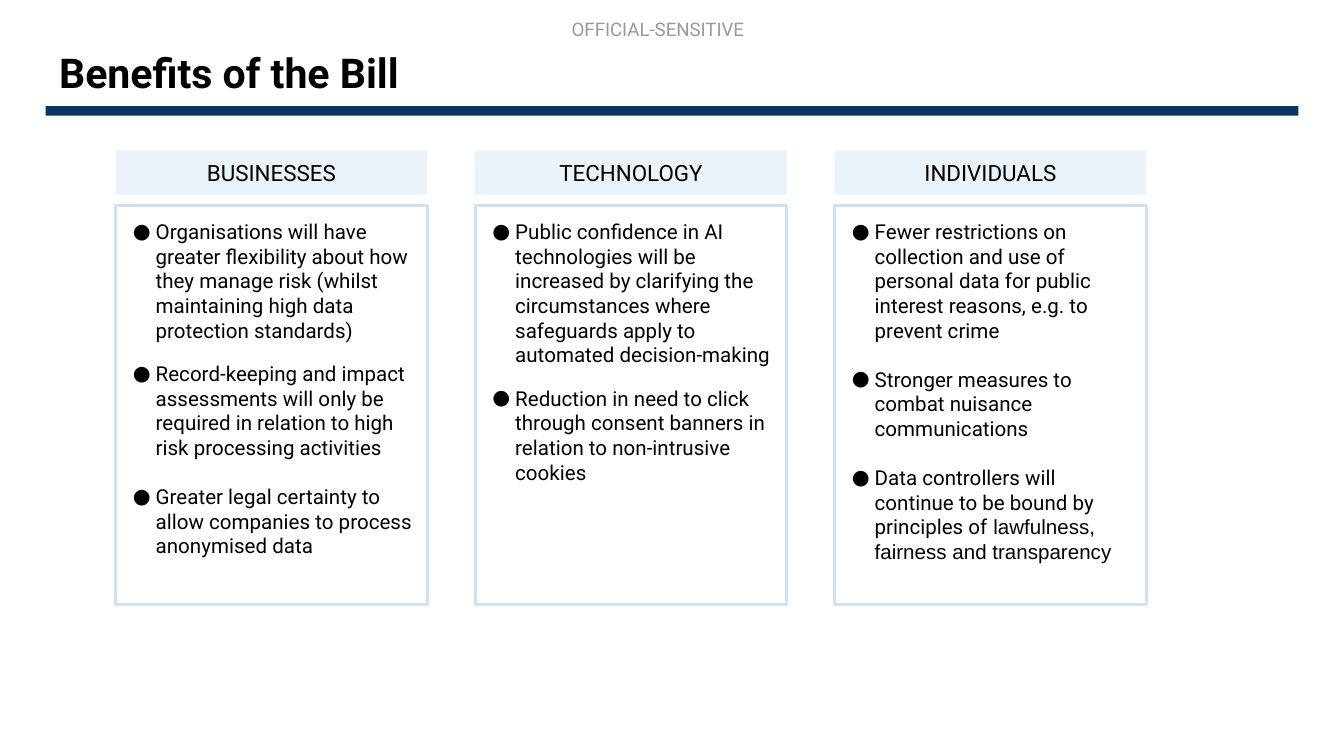
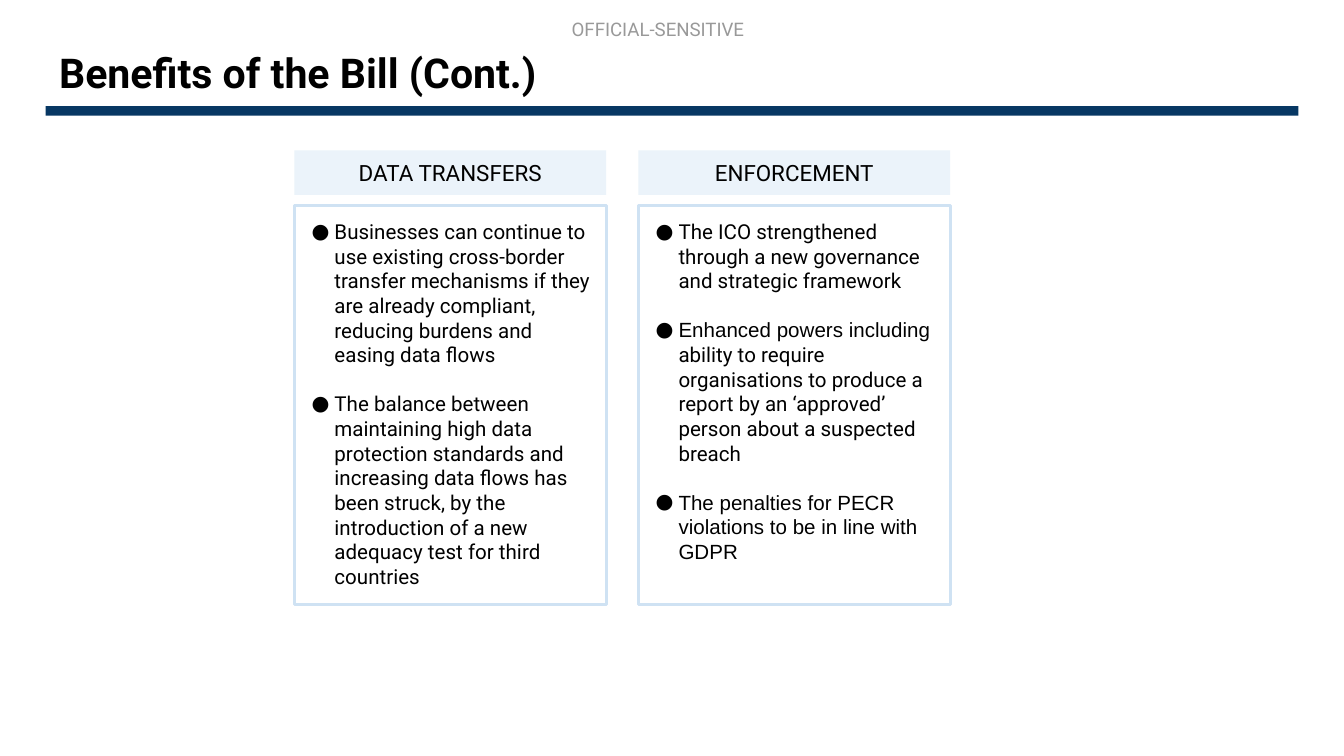
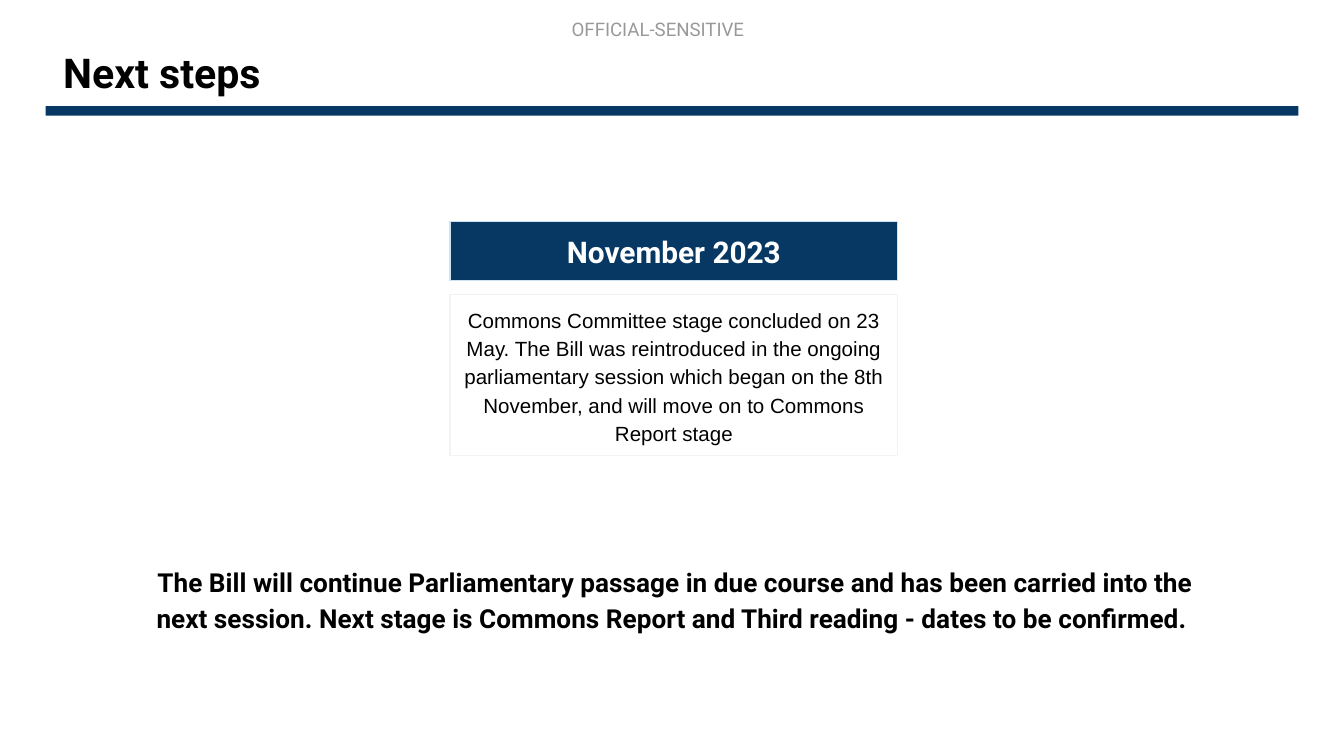
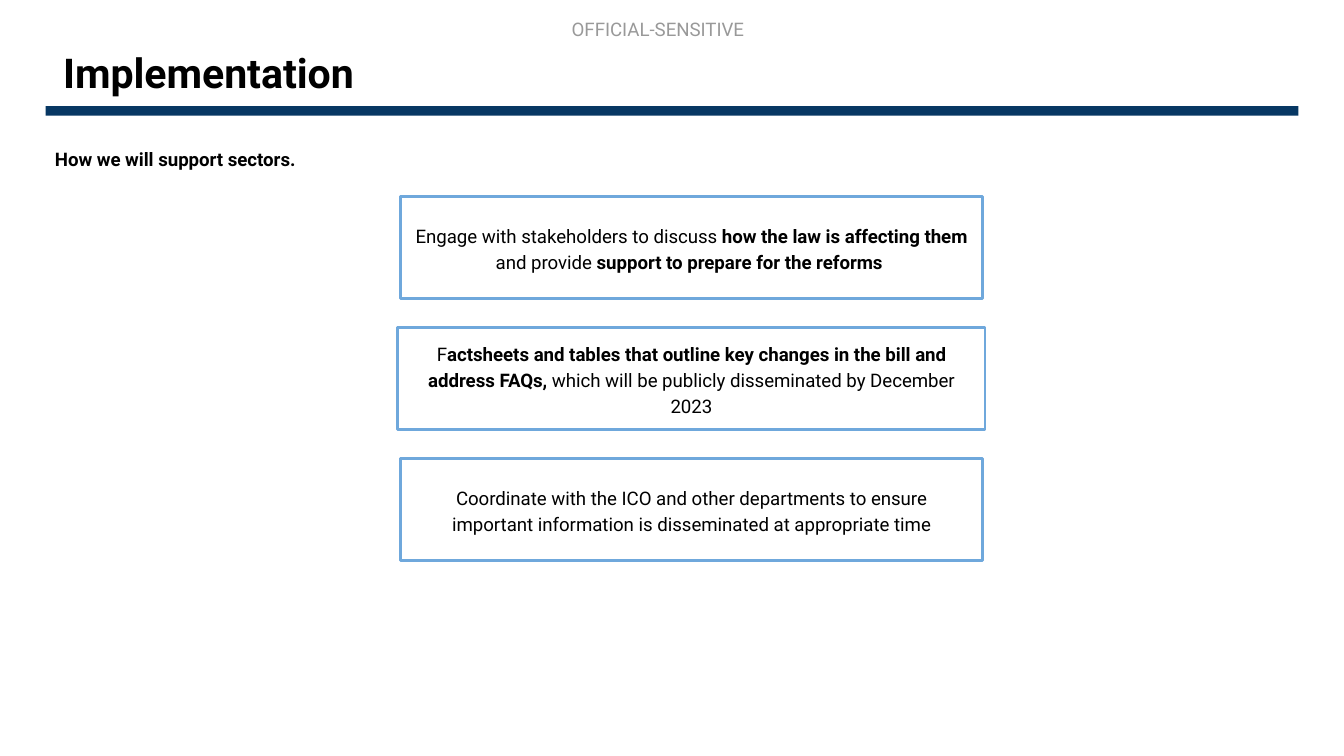
from dataclasses import dataclass

from lxml import etree
from pptx import Presentation
from pptx.dml.color import RGBColor
from pptx.enum.shapes import MSO_SHAPE
from pptx.enum.text import MSO_ANCHOR, MSO_AUTO_SIZE, PP_ALIGN
from pptx.oxml.ns import qn
from pptx.util import Inches, Pt

RECTANGLE = MSO_SHAPE.RECTANGLE
TOP, MIDDLE = MSO_ANCHOR.TOP, MSO_ANCHOR.MIDDLE
LEFT, CENTER = PP_ALIGN.LEFT, PP_ALIGN.CENTER
FIXED, GROW = MSO_AUTO_SIZE.NONE, MSO_AUTO_SIZE.SHAPE_TO_FIT_TEXT
TITLE_ONLY = 5


@dataclass(frozen=True)
class Theme:
    navy: str = "073763"
    pale_blue: str = "CFE2F3"
    mid_blue: str = "6FA8DC"
    pale_grey: str = "F3F3F3"
    grey: str = "999999"
    black: str = "000000"
    white: str = "FFFFFF"
    font: str = "Roboto"
    plain_font: str = "Arial"
    title_size: float = 22
    date_size: float = 16
    closing_size: float = 14
    heading_size: float = 12
    body_size: float = 11
    small_size: float = 10
    loose: float = 1.15
    inset: float = 0.1
    heading_opacity: int = 41


THEME = Theme()


@dataclass(frozen=True)
class Span:
    text: str
    bold: bool = False
    font: str = THEME.font


def spread(first, last, count):
    """Evenly spaced positions from first to last."""
    return [first + (last - first) * i / (count - 1) for i in range(count)]


def prepare_frame(shape, anchor=MIDDLE, auto_size=FIXED):
    frame = shape.text_frame
    frame.word_wrap = True
    frame.auto_size = auto_size
    frame.vertical_anchor = anchor
    frame.margin_left = frame.margin_right = Inches(THEME.inset)
    frame.margin_top = frame.margin_bottom = Inches(THEME.inset)
    return frame


def write_para(para, spans, size, color=THEME.black, align=CENTER, spacing=None):
    para.alignment = align
    if spacing:
        para.line_spacing = spacing
    for span in spans:
        run = para.add_run()
        run.text = span.text
        run.font.name = span.font
        run.font.size = Pt(size)
        run.font.bold = span.bold
        run.font.color.rgb = RGBColor.from_string(color)


def add_bullet(para):
    properties = para._p.get_or_add_pPr()
    properties.set("marL", str(Inches(0.2)))
    properties.set("indent", str(Inches(-0.17)))
    bullet_color = etree.SubElement(properties, qn("a:buClr"))
    etree.SubElement(bullet_color, qn("a:srgbClr"), val=THEME.black)
    etree.SubElement(properties, qn("a:buFont"), typeface=THEME.font)
    etree.SubElement(properties, qn("a:buChar"), char="●")


def add_rectangle(page, bounds, fill=None, line=None, line_width=1.5, opacity=None):
    shape = page.shapes.add_shape(RECTANGLE, *map(Inches, bounds))
    shape.shadow.inherit = False
    if fill:
        shape.fill.solid()
        shape.fill.fore_color.rgb = RGBColor.from_string(fill)
    else:
        shape.fill.background()
    if opacity:
        color = shape.fill._xPr.find(".//" + qn("a:srgbClr"))
        etree.SubElement(color, qn("a:alpha"), val=str(opacity * 1000))
    if line:
        shape.line.color.rgb = RGBColor.from_string(line)
        shape.line.width = Pt(line_width)
    else:
        shape.line.fill.background()
    return shape


def add_label(page, bounds, spans, size, anchor=MIDDLE, auto_size=FIXED, **style):
    box = page.shapes.add_textbox(*map(Inches, bounds))
    frame = prepare_frame(box, anchor, auto_size)
    write_para(frame.paragraphs[0], spans, size, **style)


def add_page(deck, title, title_left, title_width):
    """Add a slide with its title, rule and marking."""
    page = deck.slides.add_slide(deck.slide_layouts[TITLE_ONLY])
    holder = page.shapes.title
    holder.left, holder.top = Inches(title_left), Inches(0.28)
    holder.width, holder.height = Inches(title_width), Inches(0.52)
    frame = prepare_frame(holder)
    write_para(frame.paragraphs[0], [Span(title, True)], THEME.title_size, align=LEFT)
    add_rectangle(page, (0.34, 0.79, 9.32, 0.07), fill=THEME.navy)
    add_label(page, (3.01, 0.05, 3.77, 0.37), [Span("OFFICIAL-SENSITIVE")],
              THEME.small_size, TOP, GROW, color=THEME.grey)
    return page


def add_column(page, left, heading, bullets):
    """Add a heading over a box of bullets, each a (space before, spans) pair."""
    width = 2.32
    header = add_rectangle(page, (left, 1.12, width, 0.33), fill=THEME.pale_blue,
                           opacity=THEME.heading_opacity)
    write_para(prepare_frame(header).paragraphs[0], [Span(heading)], THEME.heading_size)
    box = add_rectangle(page, (left, 1.53, width, 2.97), line=THEME.pale_blue)
    frame = prepare_frame(box, TOP)
    for index, (gap, spans) in enumerate(bullets):
        para = frame.add_paragraph() if index else frame.paragraphs[0]
        para.space_before = Pt(gap)
        write_para(para, spans, THEME.body_size, align=LEFT)
        add_bullet(para)


def add_columns(page, first, last, columns):
    for left, (heading, bullets) in zip(spread(first, last, len(columns)), columns):
        add_column(page, left, heading, bullets)


NARROW_GAP, LINE_GAP = 10, 13

BENEFITS = [
    ("BUSINESSES", [
        (0, [Span("Organisations will have greater flexibility about how they manage "
                  "risk (whilst maintaining high data protection standards)")]),
        (NARROW_GAP, [Span("Record-keeping and impact assessments will only be required "
                           "in relation to high risk processing activities")]),
        (LINE_GAP, [Span("Greater legal certainty to allow companies to process "
                         "anonymised data")]),
    ]),
    ("TECHNOLOGY", [
        (0, [Span("Public confidence in AI technologies will be increased by clarifying "
                  "the circumstances where safeguards apply to automated "
                  "decision-making")]),
        (NARROW_GAP, [Span("Reduction in need to click through consent banners in "
                           "relation to non-intrusive cookies")]),
    ]),
    ("INDIVIDUALS", [
        (0, [Span("Fewer restrictions on collection and use of personal data for public "
                  "interest reasons, e.g. to prevent crime")]),
        (LINE_GAP, [Span("Stronger measures to combat nuisance communications")]),
        (LINE_GAP, [Span("Data controllers will continue to be bound by principles of"),
                    Span(" lawfulness, fairness and transparency",
                         font=THEME.plain_font)]),
    ]),
]

MORE_BENEFITS = [
    ("DATA TRANSFERS", [
        (0, [Span("Businesses can continue to use existing cross-border transfer "
                  "mechanisms if they are already compliant, reducing burdens and "
                  "easing data flows")]),
        (LINE_GAP, [Span("The balance between maintaining high data protection standards "
                         "and increasing data flows has been struck, by the introduction "
                         "of a new adequacy test for third countries")]),
    ]),
    ("ENFORCEMENT", [
        (0, [Span("The ICO strengthened through a new governance and strategic "
                  "framework")]),
        (LINE_GAP, [Span("Enhanced powers including ", font=THEME.plain_font),
                    Span("ability to require organisations to produce a report by an "
                         "‘approved’ person about a suspected breach")]),
        (LINE_GAP, [Span("The penalties for PECR violations to be in line with GDPR",
                         font=THEME.plain_font)]),
    ]),
]

SUPPORT_STEPS = [
    (2.98, 4.33, [Span("Engage with stakeholders to discuss "),
                  Span("how the law is affecting them ", True),
                  Span("and provide "),
                  Span("support to prepare for the reforms ", True)]),
    (2.96, 4.37, [Span("F"),
                  Span("actsheets and tables that outline key changes in the bill and "
                       "address FAQs, ", True),
                  Span("which will be publicly disseminated by December 2023")]),
    (2.98, 4.33, [Span("Coordinate with the ICO and other departments to ensure "
                       "important information is disseminated at appropriate time")]),
]


def add_next_steps(page):
    left, width = 3.35, 3.33
    date = add_rectangle(page, (left, 1.65, width, 0.44), THEME.navy,
                         THEME.pale_blue, 0.75)
    write_para(prepare_frame(date).paragraphs[0], [Span("November 2023", True)],
               THEME.date_size, THEME.white)
    stage = add_rectangle(page, (left, 2.19, width, 1.2), line=THEME.pale_grey,
                          line_width=0.75)
    stage_text = ("Commons Committee stage concluded on 23 May. The Bill was reintroduced "
                  "in the ongoing parliamentary session which began on the 8th November, "
                  "and will move on to Commons Report stage")
    write_para(prepare_frame(stage).paragraphs[0],
               [Span(stage_text, font=THEME.plain_font)], THEME.body_size,
               spacing=THEME.loose)
    closing = ("The Bill will continue Parliamentary passage in due course and has been "
               "carried into the next session. Next stage is Commons Report and Third "
               "reading - dates to be confirmed. ")
    add_label(page, (0.97, 4.03, 8.11, 0.84), [Span(closing, True)],
              THEME.closing_size, spacing=THEME.loose)


def add_support_steps(page):
    add_label(page, (0.31, 0.98, 9.32, 0.37), [Span("How we will support sectors.", True)],
              THEME.small_size, TOP, GROW, align=LEFT, spacing=THEME.loose)
    tops = spread(1.46, 3.41, len(SUPPORT_STEPS))
    for top, (left, width, spans) in zip(tops, SUPPORT_STEPS):
        box = add_rectangle(page, (left, top, width, 0.76), line=THEME.mid_blue)
        write_para(prepare_frame(box).paragraphs[0], spans, THEME.small_size,
                   spacing=THEME.loose)


def main():
    deck = Presentation()
    deck.slide_width = Inches(10)
    deck.slide_height = deck.slide_width * 9 // 16
    add_columns(add_page(deck, "Benefits of the Bill", 0.34, 9.12), 0.86, 6.21, BENEFITS)
    add_columns(add_page(deck, "Benefits of the Bill (Cont.)", 0.34, 9.12),
                2.19, 4.75, MORE_BENEFITS)
    add_next_steps(add_page(deck, "Next steps", 0.37, 9.26))
    add_support_steps(add_page(deck, "Implementation", 0.37, 9.26))
    deck.save("out.pptx")


if __name__ == "__main__":
    main()
